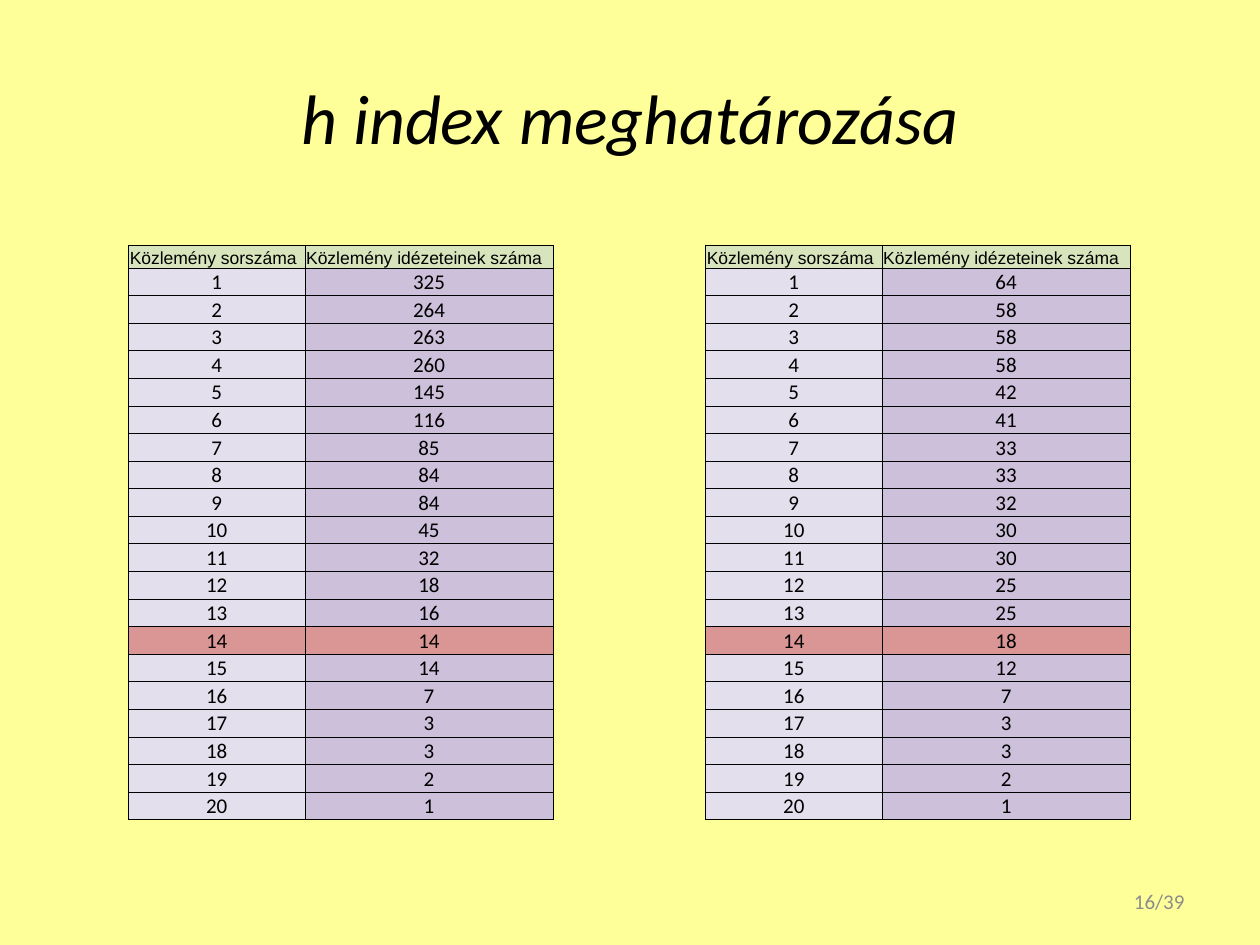
from lxml.etree import SubElement
from pptx import Presentation
from pptx.dml.color import RGBColor
from pptx.enum.text import MSO_ANCHOR, PP_ALIGN
from pptx.oxml.ns import qn
from pptx.util import Inches, Pt

# Content
TITLE = "h index meghatározása"
PAGE_NUMBER = "16/39"
HEADERS = ("Közlemény sorszáma", "Közlemény idézeteinek száma")
CITATIONS = [
    [325, 264, 263, 260, 145, 116, 85, 84, 84, 45, 32, 18, 16, 14, 14, 7, 3, 3, 2, 1],
    [64, 58, 58, 58, 42, 41, 33, 33, 32, 30, 30, 25, 25, 18, 12, 7, 3, 3, 2, 1],
]

# Layout in inches, and colours
TABLE_LEFTS = (1.02, 5.6)
TABLE_TOP, TABLE_HEIGHT, HEADER_HEIGHT = 1.95, 4.55, 0.17
COLUMN_WIDTHS = (1.4, 1.97)
BACKGROUND, BLACK, GREY = "FFFF99", "000000", "8C8C8C"
HEADER_FILL, H_INDEX_FILL = "D8E4BC", "DA9694"
COLUMN_FILLS = ("E4DFEC", "CCC0DA")


def color(value):
    return RGBColor.from_string(value)


def write(frame, text, size=12, font="Calibri", fill=BLACK, italic=False,
          align=PP_ALIGN.CENTER):
    para = frame.paragraphs[0]
    para.alignment = align
    span = para.add_run()
    span.text = text
    span.font.size = Pt(size)
    span.font.name = font
    span.font.italic = italic
    span.font.color.rgb = color(fill)


def add_text(page, left, top, width, height, text, **style):
    box = page.shapes.add_textbox(*map(Inches, (left, top, width, height)))
    box.text_frame.word_wrap = True
    box.text_frame.vertical_anchor = MSO_ANCHOR.MIDDLE
    write(box.text_frame, text, **style)


def add_borders(cell):
    properties = cell._tc.get_or_add_tcPr()
    for side in ("a:lnL", "a:lnR", "a:lnT", "a:lnB"):
        line = SubElement(properties, qn(side), w=str(Pt(0.5)))
        solid = SubElement(line, qn("a:solidFill"))
        SubElement(solid, qn("a:srgbClr"), val=BLACK)


def fill_cell(cell, text, fill, anchor=MSO_ANCHOR.MIDDLE, **style):
    cell.margin_left = cell.margin_right = cell.margin_top = Inches(0.01)
    cell.margin_bottom = 0
    cell.vertical_anchor = anchor
    add_borders(cell)
    cell.fill.solid()
    cell.fill.fore_color.rgb = color(fill)
    write(cell.text_frame, text, **style)


def add_citation_table(page, left, citations):
    table = page.shapes.add_table(
        len(citations) + 1, len(HEADERS), Inches(left), Inches(TABLE_TOP),
        Inches(sum(COLUMN_WIDTHS)), Inches(TABLE_HEIGHT)).table
    for column, width in zip(table.columns, COLUMN_WIDTHS):
        column.width = Inches(width)
    row_height = (TABLE_HEIGHT - HEADER_HEIGHT) / len(citations)
    for index, row in enumerate(table.rows):
        row.height = Inches(row_height if index else HEADER_HEIGHT)

    for column, header in enumerate(HEADERS):
        fill_cell(table.cell(0, column), header, HEADER_FILL, MSO_ANCHOR.BOTTOM,
                  size=10, font="Arial", align=PP_ALIGN.LEFT)

    # The h index is the last rank that its citation count still reaches
    h_index = sum(count >= rank for rank, count in enumerate(citations, 1))
    for rank, count in enumerate(citations, 1):
        for column, value in enumerate((rank, count)):
            fill = H_INDEX_FILL if rank == h_index else COLUMN_FILLS[column]
            fill_cell(table.cell(rank, column), str(value), fill)


def main():
    deck = Presentation()
    deck.slide_width, deck.slide_height = Inches(10), Inches(7.5)
    page = deck.slides.add_slide(deck.slide_layouts[6])
    page.background.fill.solid()
    page.background.fill.fore_color.rgb = color(BACKGROUND)

    add_text(page, 0.5, 0.3, 9, 1.25, TITLE, size=40, italic=True)
    for left, citations in zip(TABLE_LEFTS, CITATIONS):
        add_citation_table(page, left, citations)
    add_text(page, 7.17, 6.95, 2.33, 0.4, PAGE_NUMBER, fill=GREY,
             align=PP_ALIGN.RIGHT)
    deck.save("out.pptx")


if __name__ == "__main__":
    main()
